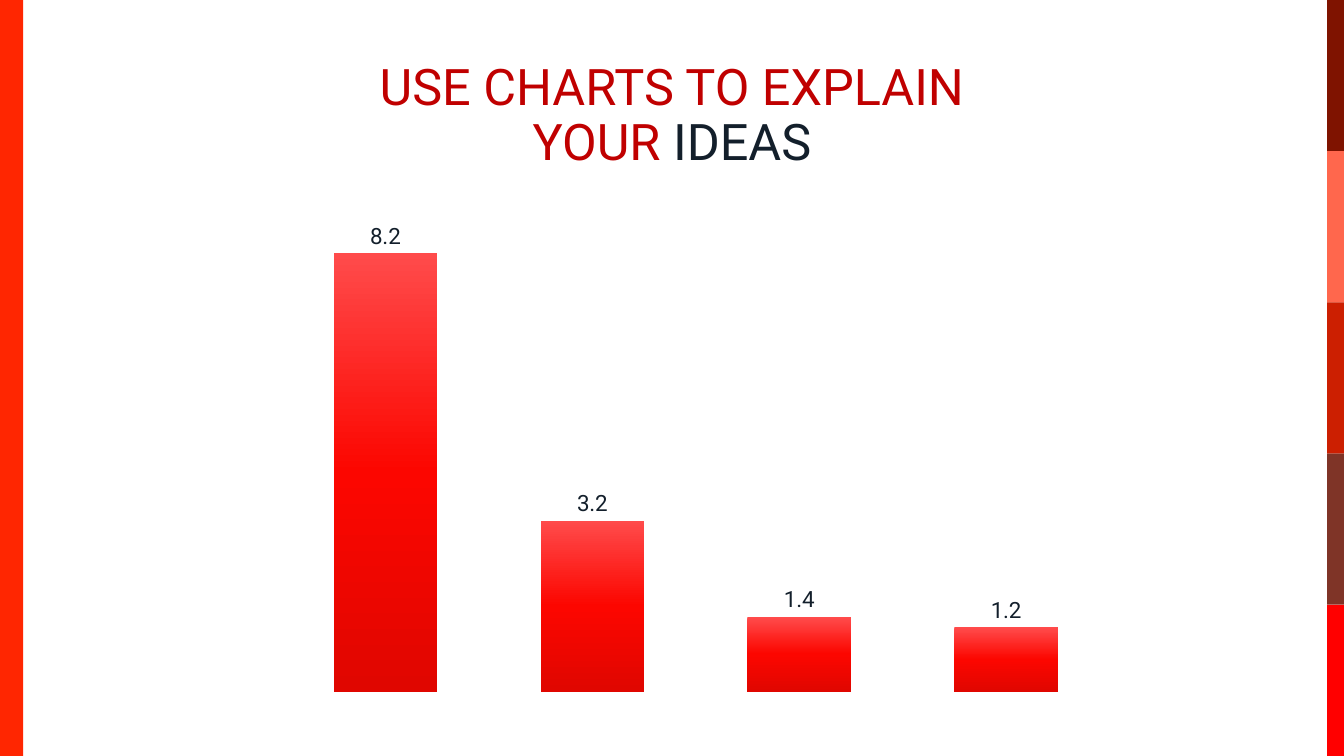
from dataclasses import dataclass

from pptx import Presentation
from pptx.chart.data import CategoryChartData
from pptx.dml.color import RGBColor
from pptx.enum.chart import XL_CHART_TYPE, XL_LABEL_POSITION
from pptx.enum.shapes import MSO_SHAPE
from pptx.enum.text import MSO_ANCHOR, PP_ALIGN
from pptx.oxml import parse_xml
from pptx.oxml.ns import nsdecls, qn
from pptx.slide import Slide
from pptx.util import Emu, Pt

RECTANGLE = MSO_SHAPE.RECTANGLE
COLUMNS = XL_CHART_TYPE.COLUMN_CLUSTERED
OUTSIDE_END = XL_LABEL_POSITION.OUTSIDE_END
BOTTOM = MSO_ANCHOR.BOTTOM
CENTER = PP_ALIGN.CENTER

FONT = "Roboto"
ORANGE_RED = RGBColor(0xFF, 0x26, 0x01)
MAROON = RGBColor(0x7F, 0x13, 0x00)
CORAL = RGBColor(0xFF, 0x67, 0x4D)
BRICK = RGBColor(0xCC, 0x1F, 0x01)
BROWN = RGBColor(0x7F, 0x34, 0x27)
RED = RGBColor(0xFF, 0x00, 0x00)
TITLE_RED = RGBColor(0xC0, 0x00, 0x00)
INK = RGBColor(0x13, 0x1F, 0x2B)
COLUMN_STOPS = (
    (0, RGBColor(0xFF, 0x4B, 0x4B)),
    (50, RGBColor(0xFC, 0x06, 0x00)),
    (100, RGBColor(0xE0, 0x06, 0x00)),
)

PAGE_WIDTH, PAGE_HEIGHT = 1280, 720
STRIP_WIDTH = 16
STRIP_COLORS = (MAROON, CORAL, BRICK, BROWN, RED)
PLOT_LAYOUT = {"x": 0.002, "y": 0.096, "w": 0.994, "h": 0.888}
VALUES = (8.2, 3.2, 1.4, 1.2)


def px(length: int) -> Emu:
    return Emu(length * 9525)


@dataclass(frozen=True)
class Area:
    left: int
    top: int
    width: int
    height: int

    def emu(self) -> tuple[Emu, Emu, Emu, Emu]:
        return px(self.left), px(self.top), px(self.width), px(self.height)


@dataclass(frozen=True)
class Band:
    area: Area
    color: RGBColor


def add_band(page: Slide, band: Band) -> None:
    shape = page.shapes.add_shape(RECTANGLE, *band.area.emu())
    shape.shadow.inherit = False
    shape.fill.solid()
    shape.fill.fore_color.rgb = band.color
    shape.line.fill.background()


def add_span(para, text: str, *, size: int, color: RGBColor) -> None:
    span = para.add_run()
    span.text = text
    span.font.name = FONT
    span.font.size = Pt(size)
    span.font.color.rgb = color


def add_title(page: Slide, area: Area) -> None:
    box = page.shapes.add_textbox(*area.emu())
    frame = box.text_frame
    frame.word_wrap = True
    frame.vertical_anchor = BOTTOM
    frame.margin_left = frame.margin_right = px(10)
    frame.margin_top = frame.margin_bottom = px(10)
    para = frame.paragraphs[0]
    para.alignment = CENTER
    para.line_spacing = 0.9
    add_span(para, "USE CHARTS TO EXPLAIN YOUR ", size=36, color=TITLE_RED)
    add_span(para, "IDEAS", size=36, color=INK)


def fill_columns(series) -> None:
    """Shade the columns from top to bottom."""
    stops = "".join(
        f'<a:gs pos="{percent * 1000}"><a:srgbClr val="{color}"/></a:gs>'
        for percent, color in COLUMN_STOPS
    )
    gradient = parse_xml(
        f'<a:gradFill {nsdecls("a")} rotWithShape="1"><a:gsLst>{stops}</a:gsLst>'
        '<a:lin ang="5400000" scaled="0"/></a:gradFill>'
    )
    series.format.line.fill.background()
    series._element.get_or_add_spPr().insert(0, gradient)


def place_plot(chart) -> None:
    """Fix the inner plot area as fractions of the chart."""
    plot_area = chart._chartSpace.chart.plotArea
    for layout in plot_area.findall(qn("c:layout")):
        plot_area.remove(layout)
    modes = "".join(f'<c:{side}Mode val="edge"/>' for side in "xy")
    sizes = "".join(f'<c:{key} val="{part}"/>' for key, part in PLOT_LAYOUT.items())
    plot_area.insert(0, parse_xml(
        f'<c:layout {nsdecls("c")}><c:manualLayout><c:layoutTarget val="inner"/>'
        f"{modes}{sizes}</c:manualLayout></c:layout>"
    ))


def add_column_chart(page: Slide, area: Area) -> None:
    data = CategoryChartData()
    data.categories = [str(number) for number in range(1, len(VALUES) + 1)]
    data.add_series("Series 1", VALUES)
    chart = page.shapes.add_chart(COLUMNS, *area.emu(), data).chart
    chart.has_title = False
    chart.has_legend = False
    chart.font.name = FONT
    chart.font.size = Pt(10)
    chart.font.color.rgb = TITLE_RED

    # Hidden axes with a fixed value range
    for axis in (chart.category_axis, chart.value_axis):
        axis.has_major_gridlines = False
        axis.visible = False
    chart.value_axis.minimum_scale = 0
    chart.value_axis.maximum_scale = 9

    # Columns and their values
    plot = chart.plots[0]
    plot.vary_by_categories = False
    plot.gap_width = 100
    plot.overlap = -24
    series = plot.series[0]
    fill_columns(series)
    labels = series.data_labels
    labels.show_value = True
    labels.position = OUTSIDE_END
    labels.font.name = FONT
    labels.font.size = Pt(16)
    labels.font.color.rgb = INK
    place_plot(chart)


def main() -> None:
    deck = Presentation()
    deck.slide_width = px(PAGE_WIDTH)
    deck.slide_height = px(PAGE_HEIGHT)
    page = deck.slides.add_slide(deck.slide_layouts[6])

    # Edge bands: one on the left, equal strips down the right
    strip_height = PAGE_HEIGHT // len(STRIP_COLORS)
    strip_left = PAGE_WIDTH - STRIP_WIDTH
    bands = [Band(Area(0, 0, 22, PAGE_HEIGHT), ORANGE_RED)] + [
        Band(Area(strip_left, row * strip_height, STRIP_WIDTH, strip_height), color)
        for row, color in enumerate(STRIP_COLORS)
    ]
    for band in bands:
        add_band(page, band)

    add_title(page, Area(329, 42, 622, 131))
    add_column_chart(page, Area(267, 151, 793, 516))
    deck.save("out.pptx")


if __name__ == "__main__":
    main()
